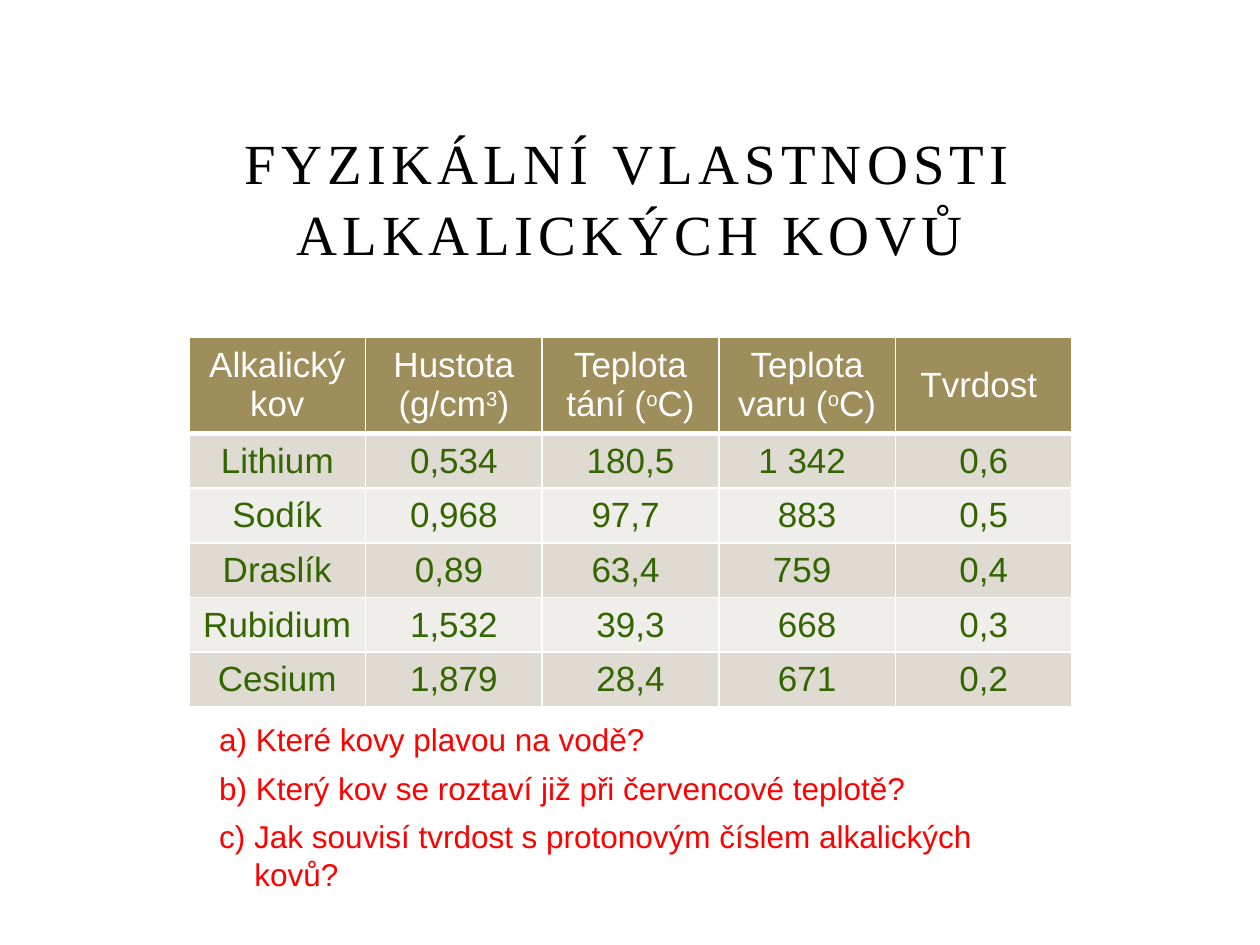
import dataclasses

import pptx
import pptx.dml.color
import pptx.enum.text
import pptx.oxml
import pptx.oxml.ns
import pptx.util

Cm = pptx.util.Cm
Pt = pptx.util.Pt
ALIGN = pptx.enum.text.PP_ALIGN
ANCHOR = pptx.enum.text.MSO_ANCHOR

HUES = {
    "black": "000000",
    "white": "FFFFFF",
    "head": "9E8E5C",
    "dark": "DFDBD2",
    "light": "F0EEEA",
    "green": "336600",
    "red": "FF0000",
}


@dataclasses.dataclass
class Metal:
    name: str
    dense: str
    melt: str
    boil: str
    hard: str


# Carets enclose superscripts
HEADS = Metal("Alkalický kov", "Hustota (g/cm^3^)", "Teplota tání (^o^C)",
              "Teplota varu (^o^C)", "Tvrdost ")
METALS = [
    Metal("Lithium", "0,534", "180,5", "1 342 ", "0,6"),
    Metal("Sodík", "0,968", "97,7 ", "883", "0,5"),
    Metal("Draslík", "0,89 ", "63,4 ", "759 ", "0,4"),
    Metal("Rubidium", "1,532", "39,3", "668", "0,3"),
    Metal("Cesium", "1,879", "28,4", "671", "0,2"),
]
TASKS = [
    "a) Které kovy plavou na vodě?",
    "b) Který kov se roztaví již při červencové teplotě?",
    "c) Jak souvisí tvrdost s protonovým číslem alkalických kovů?",
]


def tint(name: str) -> pptx.dml.color.RGBColor:
    return pptx.dml.color.RGBColor.from_string(HUES[name])


def write(par, text: str, *, size: float, hue: str, font: str = "Arial",
          align=ALIGN.LEFT, track: float = 0, before: float = 0) -> None:
    """Fill a paragraph with text; parts between carets are raised."""
    par.alignment = align
    if before:
        par.space_before = Pt(before)
    for i, part in enumerate(text.split("^")):
        run = par.add_run()
        run.text = part
        run.font.size = Pt(size)
        run.font.name = font
        run.font.bold = False
        run.font.color.rgb = tint(hue)
        props = run.font._element
        if track:
            props.set("spc", str(round(track * 100)))
        if i % 2:
            props.set("baseline", "30000")


def add_box(slide, left: float, top: float, width: float, height: float):
    box = slide.shapes.add_textbox(Cm(left), Cm(top), Cm(width), Cm(height))
    box.text_frame.word_wrap = True
    return box.text_frame


def edge(cell, side: str, width: float) -> None:
    """Draw one white border of a cell."""
    cell._tc.get_or_add_tcPr().append(pptx.oxml.parse_xml(
        f'<a:ln{side} {pptx.oxml.ns.nsdecls("a")} w="{Pt(width)}">'
        f'<a:solidFill><a:srgbClr val="{HUES["white"]}"/></a:solidFill>'
        f'</a:ln{side}>'))


def add_grid(slide) -> None:
    rows = [dataclasses.astuple(m) for m in [HEADS, *METALS]]
    tall, low, wide = 1.94, 1.1, 3.56
    count = len(rows[0])
    grid = slide.shapes.add_table(
        len(rows), count, Cm(3.81), Cm(6.79),
        Cm(wide * count), Cm(tall + low * len(METALS))).table
    for col in grid.columns:
        col.width = Cm(wide)
    for r, row in enumerate(rows):
        grid.rows[r].height = Cm(low if r else tall)
        fill = "head" if r == 0 else "dark" if r % 2 else "light"
        for c, text in enumerate(row):
            cell = grid.cell(r, c)
            cell.vertical_anchor = ANCHOR.MIDDLE
            # A thick rule parts the header from the body
            for side in "LRTB":
                thick = (r, side) in ((0, "B"), (1, "T"))
                edge(cell, side, 3 if thick else 1)
            cell.fill.solid()
            cell.fill.fore_color.rgb = tint(fill)
            write(cell.text_frame.paragraphs[0], text, size=20,
                  hue="green" if r else "white", align=ALIGN.CENTER)


def add_tasks(slide) -> None:
    frame = add_box(slide, 4.17, 14.4, 15.88, 4.52)
    for i, task in enumerate(TASKS):
        par = frame.add_paragraph() if i else frame.paragraphs[0]
        # Hanging indent for wrapped lines
        props = par._p.get_or_add_pPr()
        props.set("marL", str(Cm(0.71)))
        props.set("indent", str(-Cm(0.71)))
        write(par, task, size=18, hue="red", before=6 if i else 0)


def main() -> None:
    deck = pptx.Presentation()
    deck.slide_width, deck.slide_height = Cm(25.4), Cm(19.05)
    slide = deck.slides.add_slide(deck.slide_layouts[6])

    # Title
    frame = add_box(slide, 3.81, 3.61, 17.78, 1.9)
    frame.vertical_anchor = ANCHOR.BOTTOM
    title = frame.paragraphs[0]
    title.line_spacing = 1.04
    write(title, "FYZIKÁLNÍ VLASTNOSTI ALKALICKÝCH KOVŮ", size=32.4,
          hue="black", font="Times New Roman", align=ALIGN.CENTER, track=3)

    # Table of metals and the questions below it
    add_grid(slide)
    add_tasks(slide)
    deck.save("out.pptx")


if __name__ == "__main__":
    main()
